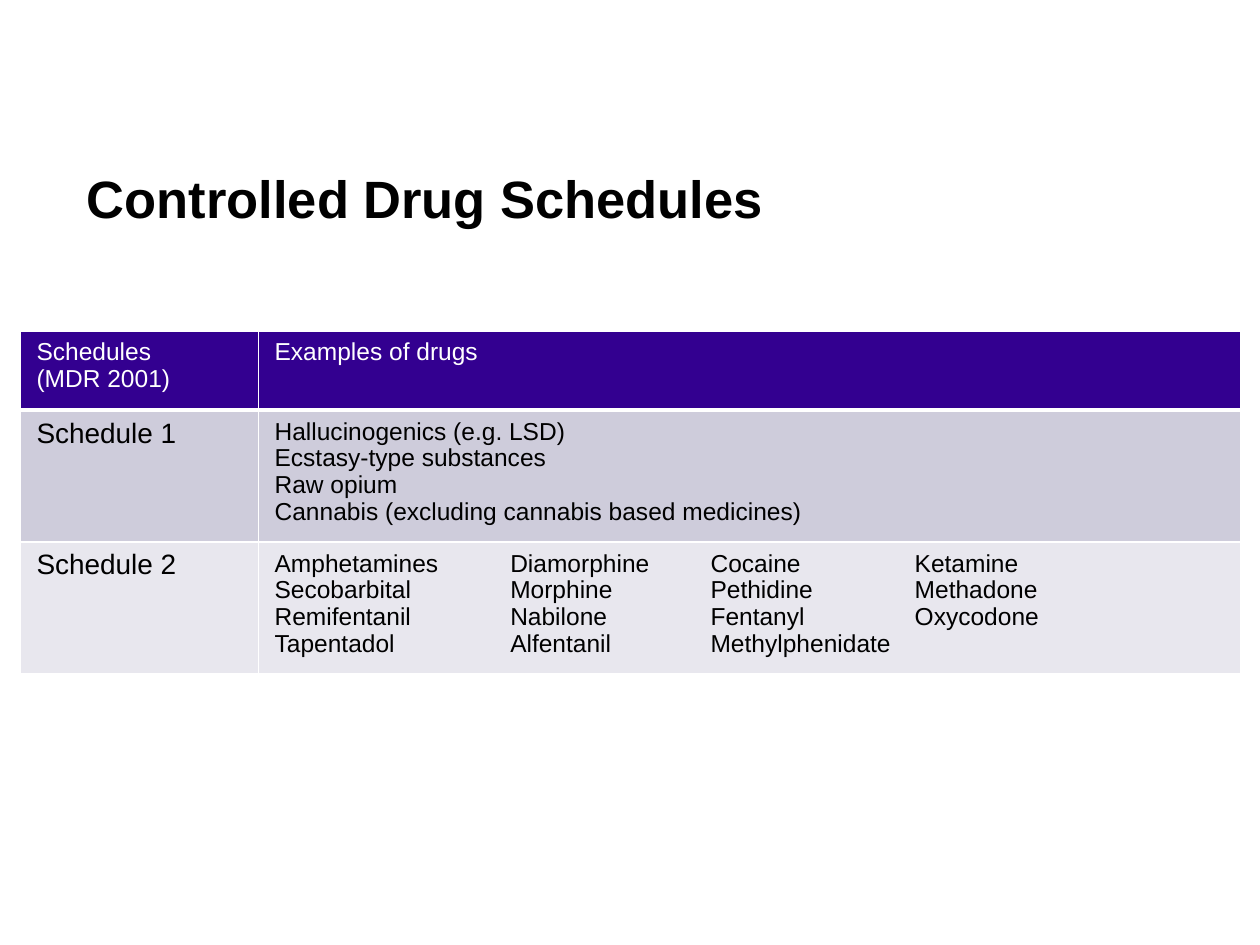
from lxml.etree import SubElement
from pptx import Presentation
from pptx.dml.color import RGBColor
from pptx.oxml.ns import qn
from pptx.util import Inches, Pt

COLORS = {"white": "FFFFFF", "black": "000000", "header": "330090",
          "band1": "CECCDB", "band2": "E8E7EE"}
W, H = 10, 7.5
COL_W = [1.89, 7.8]
ROW_H = [0.63, 1.0, 1.0]
TABS = [1.87, 3.46, 5.08]
MARGINS = {"margin_left": 0.13, "margin_right": 0.13,
           "margin_top": 0.07, "margin_bottom": 0.07}


def add_line(tf, i, text, size, color, bold=False, tabs=()):
    p = tf.paragraphs[0] if i == 0 else tf.add_paragraph()
    p.line_spacing = 0.97
    if tabs:
        lst = SubElement(p._p.get_or_add_pPr(), qn("a:tabLst"))
        for pos in tabs:
            SubElement(lst, qn("a:tab"), pos=str(Inches(pos)), algn="l")
    r = p.add_run()
    r.text = text
    for name, value in {"name": "Arial", "size": Pt(size), "bold": bold}.items():
        setattr(r.font, name, value)
    r.font.color.rgb = RGBColor.from_string(COLORS[color])


def add_border(cell, side, width):
    ln = SubElement(cell._tc.get_or_add_tcPr(), qn("a:" + side), w=str(Pt(width)))
    fill = SubElement(ln, qn("a:solidFill"))
    SubElement(fill, qn("a:srgbClr"), val=COLORS["white"])


prs = Presentation()
prs.slide_width, prs.slide_height = Inches(W), Inches(H)
s = prs.slides.add_slide(prs.slide_layouts[6])

title = s.shapes.add_textbox(Inches(0.069 * W), Inches(0.18 * H),
                             Inches(0.862 * W), Inches(0.067 * H))
tf = title.text_frame
tf.word_wrap = True
for name in MARGINS:
    setattr(tf, name, 0)
add_line(tf, 0, "Controlled Drug Schedules", 30, "black", bold=True)

rows = [
    ("header", "white", 14, ["Schedules", "(MDR 2001)"], ["Examples of drugs"]),
    ("band1", "black", 16, ["Schedule 1"],
     ["Hallucinogenics (e.g. LSD)", "Ecstasy-type substances", "Raw opium",
      "Cannabis (excluding cannabis based medicines)"]),
    ("band2", "black", 16, ["Schedule 2"],
     ["Amphetamines\tDiamorphine\tCocaine\tKetamine",
      "Secobarbital\tMorphine\tPethidine\tMethadone",
      "Remifentanil\tNabilone\tFentanyl\tOxycodone",
      "Tapentadol\tAlfentanil\tMethylphenidate"]),
]
table = s.shapes.add_table(len(rows), len(COL_W), Inches(0.016 * W), Inches(0.35 * H),
                           Inches(sum(COL_W)), Inches(sum(ROW_H))).table
for col, width in zip(table.columns, COL_W):
    col.width = Inches(width)
for row, height in zip(table.rows, ROW_H):
    row.height = Inches(height)

for i, (fill, color, label_size, labels, drugs) in enumerate(rows):
    for j, (lines, size) in enumerate([(labels, label_size), (drugs, 14)]):
        cell = table.cell(i, j)
        for name, value in MARGINS.items():
            setattr(cell, name, Inches(value))
        for side in ("lnL", "lnR", "lnT", "lnB"):
            header_edge = (i, side) in [(0, "lnB"), (1, "lnT")]
            add_border(cell, side, 3 if header_edge else 1)
        cell.fill.solid()
        cell.fill.fore_color.rgb = RGBColor.from_string(COLORS[fill])
        for n, text in enumerate(lines):
            add_line(cell.text_frame, n, text, size, color,
                     tabs=TABS if "\t" in text else ())

prs.save("out.pptx")
